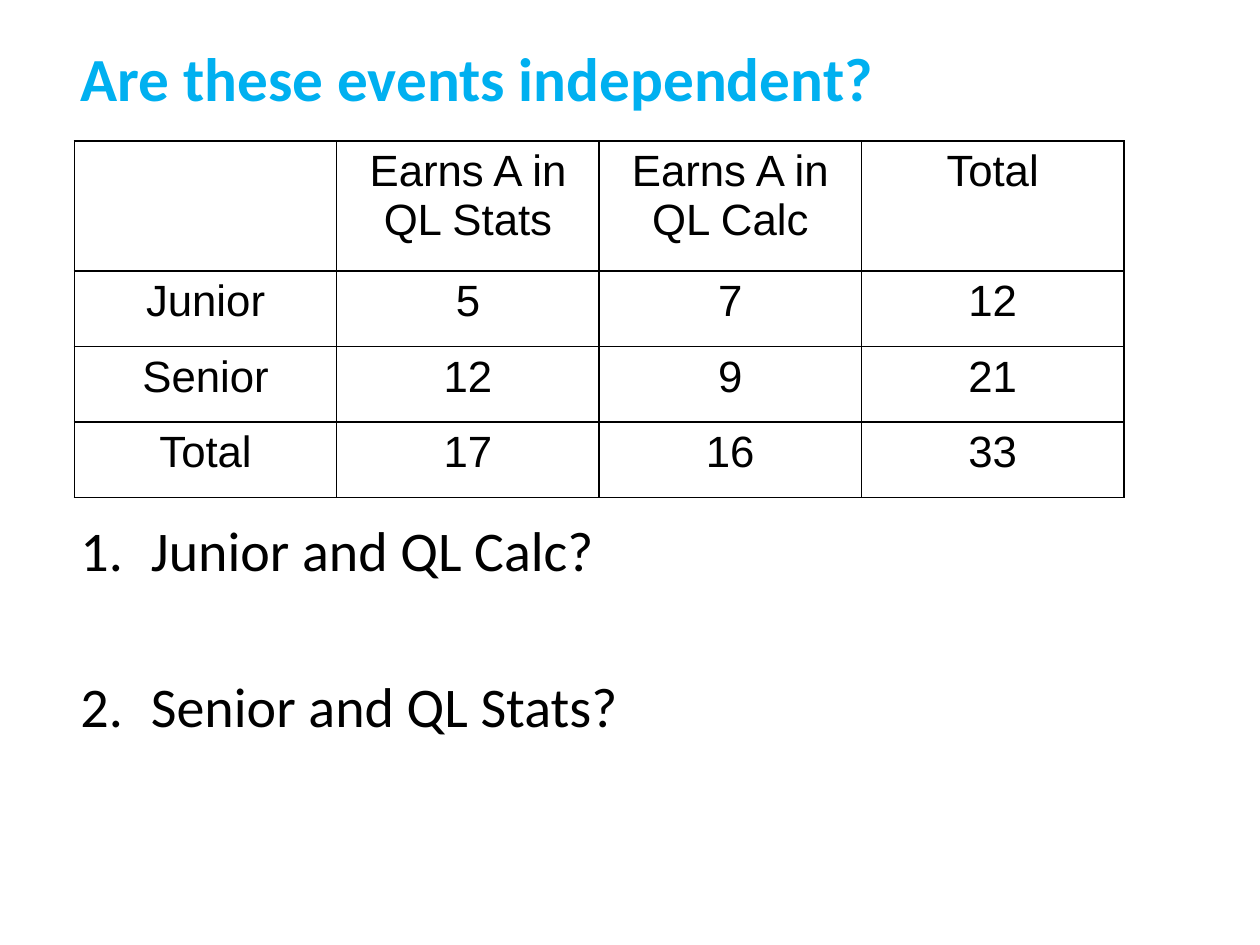
from lxml.etree import SubElement
from pptx import Presentation
from pptx.dml.color import RGBColor
from pptx.enum.text import PP_ALIGN
from pptx.oxml.ns import qn
from pptx.util import Inches, Pt

# Content
TITLE = "Are these events independent?"
GRADES = [
    ("", "Earns A in QL Stats", "Earns A in QL Calc", "Total"),
    ("Junior", "5", "7", "12"),
    ("Senior", "12", "9", "21"),
    ("Total", "17", "16", "33"),
]
QUESTIONS = ["Junior and QL Calc?", "Senior and QL Stats?"]

SKY = RGBColor(0x00, 0xB0, 0xF0)
BLACK = RGBColor(0, 0, 0)

# Layout in inches
TEXT_LEFT, TEXT_WIDTH = 0.54, 8.4
TABLE_LEFT, TABLE_TOP, TABLE_WIDTH = 0.59, 1.12, 8.33
HEADER_HEIGHT, ROW_HEIGHT = 1.03, 0.6
NUMBER_INDENT = 0.56
QUESTION_GAP = 51  # points


def add_span(para, text, font, size, color, bold=False):
    span = para.add_run()
    span.text = text
    span.font.name = font
    span.font.size = Pt(size)
    span.font.bold = bold
    span.font.color.rgb = color


def add_text_frame(page, top, height):
    box = page.shapes.add_textbox(Inches(TEXT_LEFT), Inches(top),
                                  Inches(TEXT_WIDTH), Inches(height))
    box.text_frame.word_wrap = True
    return box.text_frame


def number_paragraph(para):
    properties = para._p.get_or_add_pPr()
    properties.set("marL", str(Inches(NUMBER_INDENT)))
    properties.set("indent", str(-Inches(NUMBER_INDENT)))
    SubElement(properties, qn("a:buFont"), typeface="+mj-lt")
    SubElement(properties, qn("a:buAutoNum"), type="arabicPeriod")


def add_borders(cell):
    properties = cell._tc.get_or_add_tcPr()
    for position, side in enumerate(("lnL", "lnR", "lnT", "lnB")):
        line = properties.makeelement(qn(f"a:{side}"), {"w": str(Pt(1))})
        fill = SubElement(line, qn("a:solidFill"))
        SubElement(fill, qn("a:srgbClr"), val=str(BLACK))
        properties.insert(position, line)


def add_grades(page):
    rows, columns = len(GRADES), len(GRADES[0])
    heights = [HEADER_HEIGHT] + [ROW_HEIGHT] * (rows - 1)
    table = page.shapes.add_table(
        rows, columns, Inches(TABLE_LEFT), Inches(TABLE_TOP),
        Inches(TABLE_WIDTH), Inches(sum(heights))).table
    table.first_row = table.horz_banding = False
    for row, height in zip(table.rows, heights):
        row.height = Inches(height)
    for r, texts in enumerate(GRADES):
        for c, text in enumerate(texts):
            cell = table.cell(r, c)
            cell.fill.background()
            add_borders(cell)
            para = cell.text_frame.paragraphs[0]
            para.alignment = PP_ALIGN.CENTER
            if text:
                add_span(para, text, "Arial", 25, BLACK)


def main():
    deck = Presentation()
    deck.slide_width, deck.slide_height = Inches(10), Inches(7.5)
    page = deck.slides.add_slide(deck.slide_layouts[6])

    # Title
    title = add_text_frame(page, 0.27, 0.7)
    add_span(title.paragraphs[0], TITLE, "Calibri", 35, SKY, bold=True)

    # Two-way table
    add_grades(page)

    # Numbered questions
    frame = add_text_frame(page, 4.04, 2)
    for index, question in enumerate(QUESTIONS):
        para = frame.add_paragraph() if index else frame.paragraphs[0]
        para.space_before = Pt(QUESTION_GAP if index else 0)
        number_paragraph(para)
        add_span(para, question, "Calibri", 32, BLACK)

    deck.save("out.pptx")


if __name__ == "__main__":
    main()
